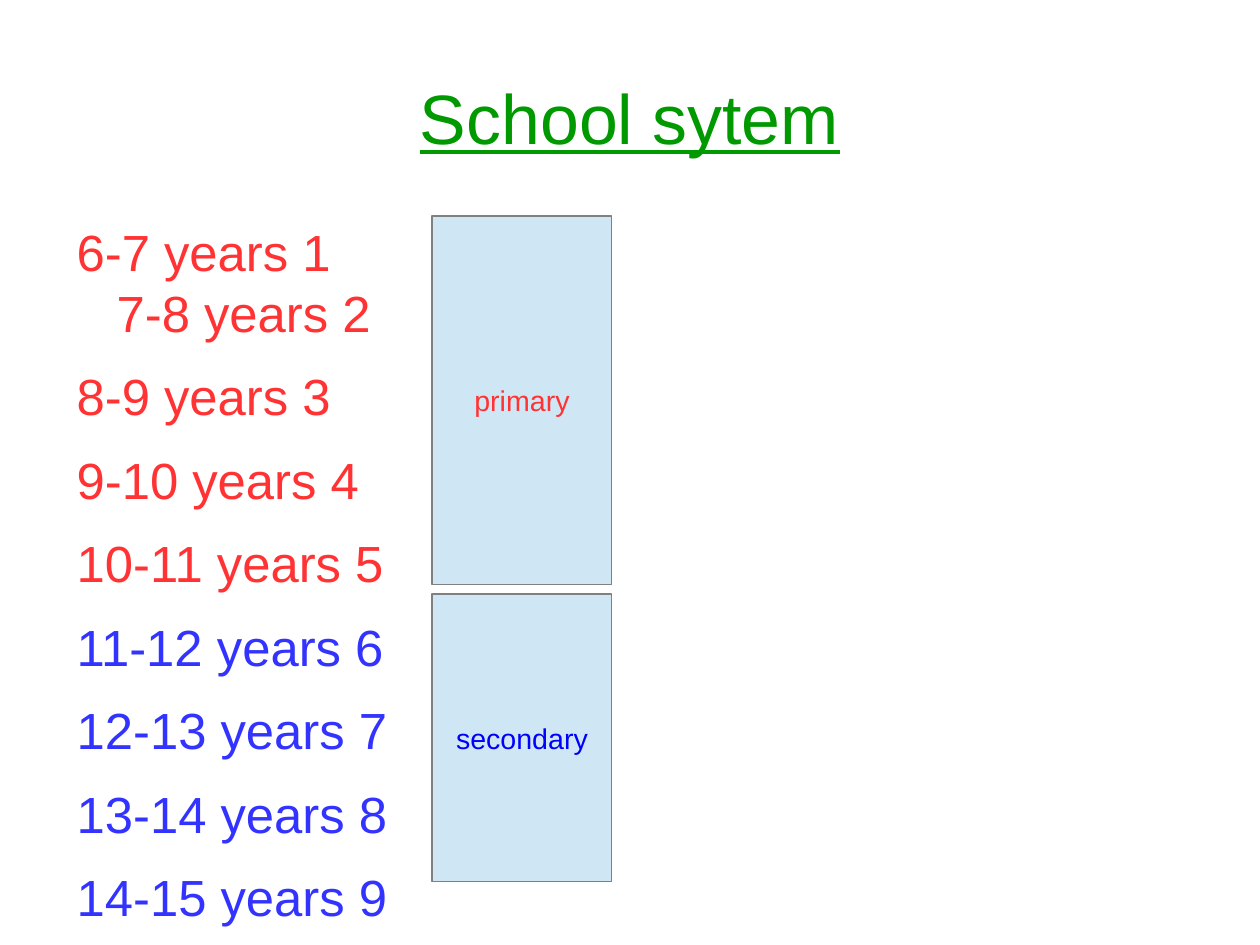
from dataclasses import dataclass

from pptx import Presentation
from pptx.dml.color import RGBColor
from pptx.enum.shapes import MSO_SHAPE
from pptx.enum.text import MSO_ANCHOR, MSO_AUTO_SIZE, PP_ALIGN
from pptx.util import Inches, Pt


@dataclass(frozen=True)
class Theme:
    font: str = "Arial"
    green: str = "009900"
    red: str = "FF3333"
    violet: str = "3333FF"
    blue: str = "0000FF"
    fill: str = "CFE7F5"
    line: str = "808080"
    title: float = 44
    body: float = 32
    label: float = 18
    pitch: float = 38.4
    gap: float = 14.2


THEME = Theme()
CM = 1 / 2.54  # inches in a centimetre
PRIMARY = ["6-7 years 1\v7-8 years 2", "8-9 years 3", "9-10 years 4",
           "10-11 years 5"]
SECONDARY = ["11-12 years 6", "12-13 years 7", "13-14 years 8",
             "14-15 years 9"]


def style(para, size, color, underline=None):
    for run in para.runs:
        font = run.font
        font.name = THEME.font
        font.size = Pt(size)
        font.color.rgb = RGBColor.from_string(color)
        font.underline = underline


def clear_insets(frame):
    frame.margin_left = frame.margin_right = 0
    frame.margin_top = frame.margin_bottom = 0
    frame.word_wrap = True
    frame.auto_size = MSO_AUTO_SIZE.NONE


def set_title(slide, text):
    title = slide.shapes.title
    title.left, title.top = Inches(0.55), Inches(0.33)
    title.width, title.height = Inches(9.92), Inches(1.38)
    frame = title.text_frame
    clear_insets(frame)
    frame.vertical_anchor = MSO_ANCHOR.MIDDLE
    frame.text = text
    para = frame.paragraphs[0]
    para.alignment = PP_ALIGN.CENTER
    style(para, THEME.title, THEME.green, True)


def add_years(slide, groups):
    """List the school years, with one colour for each group."""
    box = slide.shapes.add_textbox(Inches(0.55), Inches(1.93),
                                   Inches(9.92), Inches(6.56))
    frame = box.text_frame
    clear_insets(frame)
    rows = [(text, color) for texts, color in groups for text in texts]
    for index, (text, color) in enumerate(rows):
        para = frame.add_paragraph() if index else frame.paragraphs[0]
        para.text = text
        para.line_spacing = Pt(THEME.pitch)
        para.space_after = Pt(THEME.gap)
        props = para._p.get_or_add_pPr()
        props.set("marL", str(Inches(0.47)))
        props.set("indent", str(Inches(-0.35)))
        style(para, THEME.body, color)


def add_stage(slide, text, top, height, color):
    """Add a labelled box; top and height are in centimetres."""
    box = slide.shapes.add_shape(MSO_SHAPE.RECTANGLE, Inches(9.6 * CM),
                                 Inches(top * CM), Inches(4 * CM),
                                 Inches(height * CM))
    box.shadow.inherit = False
    box.fill.solid()
    box.fill.fore_color.rgb = RGBColor.from_string(THEME.fill)
    box.line.color.rgb = RGBColor.from_string(THEME.line)
    box.line.width = Pt(0)
    frame = box.text_frame
    frame.word_wrap = False
    frame.vertical_anchor = MSO_ANCHOR.MIDDLE
    frame.text = text
    para = frame.paragraphs[0]
    para.alignment = PP_ALIGN.CENTER
    style(para, THEME.label, color)


def main():
    deck = Presentation()
    deck.slide_width, deck.slide_height = Inches(28 * CM), Inches(21 * CM)
    slide = deck.slides.add_slide(deck.slide_layouts[5])
    set_title(slide, "School sytem")
    add_years(slide, [(PRIMARY, THEME.red), (SECONDARY, THEME.violet)])
    add_stage(slide, "secondary", 13.2, 6.4, THEME.blue)
    add_stage(slide, "primary", 4.8, 8.2, THEME.red)
    deck.save("out.pptx")


if __name__ == "__main__":
    main()
